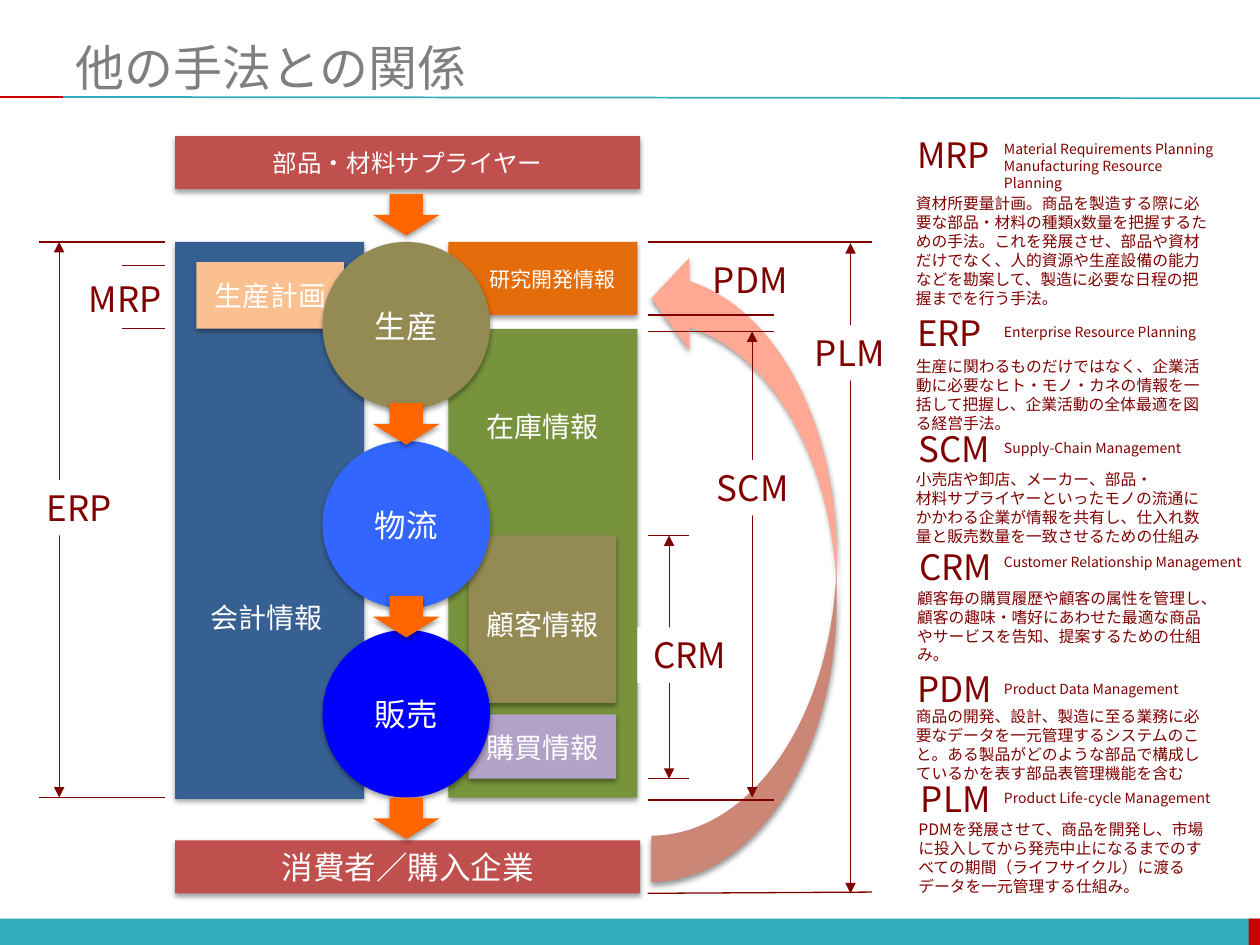
"""Build the slide that relates MRP, ERP, SCM, CRM, PDM and PLM."""
from lxml import etree
from pptx import Presentation
from pptx.dml.color import RGBColor
from pptx.enum import shapes, text
from pptx.oxml import ns
from pptx.util import Inches, Pt

FONT = "Noto Sans CJK JP"
WHITE, MAROON, ORANGE, RED = "FFFFFF", "800000", "FF6600", "C0504D"
SHAPE, ALIGN = shapes.MSO_SHAPE, text.PP_ALIGN
RECT, OVAL, DOWN = SHAPE.RECTANGLE, SHAPE.OVAL, SHAPE.DOWN_ARROW
CURVE = SHAPE.CURVED_LEFT_ARROW

FOOTER = [((0, 7.29, 10, 0.22), "33ACBD"), ((9.91, 7.29, 0.1, 0.22), "CC0000")]
TITLE_RULES = [((0.5, 0.77, 10, 0.78), "33ACBD"), ((0, 0.77, 0.5, 0.77), "CC0000")]
BLOCKS = [
    (RECT, (3.56, 2.61, 1.5, 3.72), "77933C", "", 0),
    (RECT, (3.72, 5.67, 1.17, 0.51), "B3A2C7", "", 0),
    (CURVE, (5.17, 2, 1.47, 5), "FFA893", "", 0),
    (RECT, (1.39, 1.92, 1.5, 4.42), "376092", "", 0),
    (RECT, (1.56, 2.08, 1.17, 0.53), "FAC090", "生産計画", 16),
    (RECT, (3.72, 4.25, 1.17, 1.33), "948A54", "", 0),
    (RECT, (3.56, 1.92, 1.5, 0.58), "E46C0A", "", 0),
    (OVAL, (2.56, 1.92, 1.33, 1.33), "948A54", "生産", 18),
    (OVAL, (2.56, 3.5, 1.33, 1.33), "3366FF", "物流", 18),
    (OVAL, (2.56, 5, 1.33, 1.33), "0000FF", "販売", 18),
    (RECT, (1.39, 1.08, 3.69, 0.42), RED, "部品・材料サプライヤー", 14),
    (RECT, (1.39, 6.67, 3.69, 0.42), RED, "消費者／購入企業", 18),
] + [(DOWN, (2.96, top, 0.53, 0.33), ORANGE, "", 0) for top in (1.54, 3.2, 4.73, 6.33)]
INFO_LABELS = [
    ("会計情報", (1.53, 4.72, 1.17, 0.37), 16),
    ("顧客情報", (3.72, 4.77, 1.17, 0.37), 16),
    ("在庫情報", (3.64, 3.2, 1.33, 0.37), 16),
    ("研究開発情報", (3.72, 2.07, 1.33, 0.3), 12),
    ("購買情報", (3.72, 5.75, 1.17, 0.37), 16),
]
LIMITS = [
    (0.31, 1.92, 1.31, 1.92), (0.31, 6.33, 1.31, 6.33), (0.97, 2.11, 1.31, 2.11),
    (0.97, 2.61, 1.31, 2.61), (5.14, 1.92, 6.92, 1.92), (5.14, 7.09, 6.92, 7.08),
    (5.14, 4.25, 5.47, 4.25), (5.14, 6.35, 6.14, 6.35), (5.14, 2.63, 6.14, 2.63),
    (5.14, 6.18, 5.47, 6.18), (5.14, 2.5, 6.14, 2.5),
]
SPANS = [(0.47, 1.92, 6.33), (6.75, 1.93, 7.09), (5.97, 2.63, 6.33), (5.31, 4.25, 6.18)]
SPAN_LABELS = [
    ("MRP", (0.46, 2.15, 0.92, 0.44), ALIGN.RIGHT, None),
    ("ERP", (0.17, 3.81, 0.92, 0.44), ALIGN.CENTER, WHITE),
    ("CRM", (5.06, 4.98, 0.83, 0.44), ALIGN.CENTER, WHITE),
    ("SCM", (5.56, 3.65, 0.83, 0.44), ALIGN.CENTER, WHITE),
    ("PLM", (6.33, 2.58, 0.83, 0.44), ALIGN.CENTER, WHITE),
    ("PDM", (5.56, 2, 0.86, 0.44), ALIGN.LEFT, None),
]
GLOSSARY = [
    ("MRP", (7.18, 1.01, 0.92), ALIGN.LEFT,
     "Material Requirements Planning\nManufacturing Resource Planning", (1.07, 1.93, 0.5),
     "資材所要量計画。商品を製造する際に必要な部品・材料の種類x数量を把握するための手法。"
     "これを発展させ、部品や資材だけでなく、人的資源や生産設備の能力などを勘案して、"
     "製造に必要な日程の把握までを行う手法。", (7.17, 1.49, 2.54, 1.01)),
    ("ERP", (7.18, 2.42, 0.92), ALIGN.LEFT,
     "Enterprise Resource Planning", (2.52, 1.93, 0.24),
     "生産に関わるものだけではなく、企業活動に必要なヒト・モノ・カネの情報を一括して把握し、"
     "企業活動の全体最適を図る経営手法。", (7.17, 2.78, 2.54, 0.71)),
    ("SCM", (7.19, 3.34, 0.83), ALIGN.LEFT,
     "Supply-Chain Management", (3.44, 1.93, 0.24),
     "小売店や卸店、メーカー、部品・\n材料サプライヤーといったモノの流通にかかわる企業が"
     "情報を共有し、仕入れ数量と販売数量を一致させるための仕組み", (7.17, 3.68, 2.54, 0.71)),
    ("CRM", (7.17, 4.28, 0.83), ALIGN.CENTER,
     "Customer Relationship Management", (4.34, 2.13, 0.37),
     "顧客毎の購買履歴や顧客の属性を管理し、顧客の趣味・嗜好にあわせた最適な商品や"
     "サービスを告知、提案するための仕組み。", (7.18, 4.62, 2.54, 0.71)),
    ("PDM", (7.18, 5.25, 0.86), ALIGN.LEFT,
     "Product Data Management", (5.35, 2.13, 0.24),
     "商品の開発、設計、製造に至る業務に必要なデータを一元管理するシステムのこと。"
     "ある製品がどのような部品で構成しているかを表す部品表管理機能を含む", (7.17, 5.56, 2.54, 0.71)),
    ("PLM", (7.17, 6.12, 0.83), ALIGN.CENTER,
     "Product Life-cycle Management", (6.22, 2.13, 0.24),
     "PDMを発展させて、商品を開発し、市場に投入してから発売中止になるまでのすべての期間"
     "（ライフサイクル）に渡るデータを一元管理する仕組み。", (7.19, 6.46, 2.52, 0.71)),
]


def rgb(color):
    return RGBColor.from_string(color)


def inches(box):
    return [Inches(value) for value in box]


def write(frame, words, size, color, align=ALIGN.LEFT):
    frame.text = words
    frame.word_wrap = True
    for paragraph in frame.paragraphs:
        paragraph.alignment = align
        for run in paragraph.runs:
            run.font.size, run.font.name = Pt(size), FONT
            run.font.color.rgb = rgb(color)
            east_asian = etree.SubElement(run.font._element, ns.qn("a:ea"))
            east_asian.set("typeface", FONT)


def add_label(slide, words, box, size, color, align=ALIGN.LEFT, fill=None):
    label = slide.shapes.add_textbox(*inches(box))
    write(label.text_frame, words, size, color, align)
    if fill:
        label.fill.solid()
        label.fill.fore_color.rgb = rgb(fill)


def add_block(slide, kind, box, fill):
    block = slide.shapes.add_shape(kind, *inches(box))
    block.shadow.inherit = False
    block.fill.solid()
    block.fill.fore_color.rgb = rgb(fill)
    block.line.fill.background()
    return block


def cast_shadow(block):
    effects = block._element.spPr.find(ns.qn("a:effectLst"))
    shadow = etree.SubElement(effects, ns.qn("a:outerShdw"), blurRad=str(Pt(3.1)),
                              dist=str(Pt(1.6)), dir="5400000", rotWithShape="0")
    color = etree.SubElement(shadow, ns.qn("a:srgbClr"), val="000000")
    etree.SubElement(color, ns.qn("a:alpha"), val="38000")


def add_line(slide, ends, color, width, arrows=False):
    line = slide.shapes.add_connector(shapes.MSO_CONNECTOR.STRAIGHT, *inches(ends))
    line.line.color.rgb, line.line.width = rgb(color), Pt(width)
    if arrows:
        for end in ("a:headEnd", "a:tailEnd"):
            etree.SubElement(line.line._get_or_add_ln(), ns.qn(end), type="triangle")
    etree.SubElement(line._element.spPr, ns.qn("a:effectLst"))


def main():
    deck = Presentation()
    deck.slide_width, deck.slide_height = Inches(10), Inches(7.5)
    slide = deck.slides.add_slide(deck.slide_layouts[5])
    title = slide.shapes.title
    title.left, title.top, title.width, title.height = inches((0.5, 0.3, 9.5, 0.46))
    write(title.text_frame, "他の手法との関係", 28, "7F7F7F")
    title.text_frame.vertical_anchor = text.MSO_ANCHOR.MIDDLE

    for box, fill in FOOTER:
        add_block(slide, RECT, box, fill)
    for ends, color in TITLE_RULES:
        add_line(slide, ends, color, 1)
    for kind, box, fill, words, size in BLOCKS:
        block = add_block(slide, kind, box, fill)
        cast_shadow(block)
        if words:
            write(block.text_frame, words, size, WHITE, ALIGN.CENTER)
        if kind == CURVE:
            block._element.spPr.xfrm.set("flipV", "1")
            for index, value in enumerate((0.25, 0.5, 0.205)):
                block.adjustments[index] = value
    for words, box, size in INFO_LABELS:
        add_label(slide, words, box, size, WHITE, ALIGN.CENTER)
    for ends in LIMITS:
        add_line(slide, ends, MAROON, 0.75)
    for x, top, bottom in SPANS:
        add_line(slide, (x, top, x, bottom), MAROON, 0.5, arrows=True)
    for words, box, align, fill in SPAN_LABELS:
        add_label(slide, words, box, 20, MAROON, align, fill)
    for term, (x, y, w), align, name, (top, width, height), meaning, box in GLOSSARY:
        add_label(slide, term, (x, y, w, 0.44), 20, MAROON, align)
        add_label(slide, name, (7.87, top, width, height), 8, MAROON)
        add_label(slide, meaning, box, 9, MAROON)
    deck.save("out.pptx")


if __name__ == "__main__":
    main()
